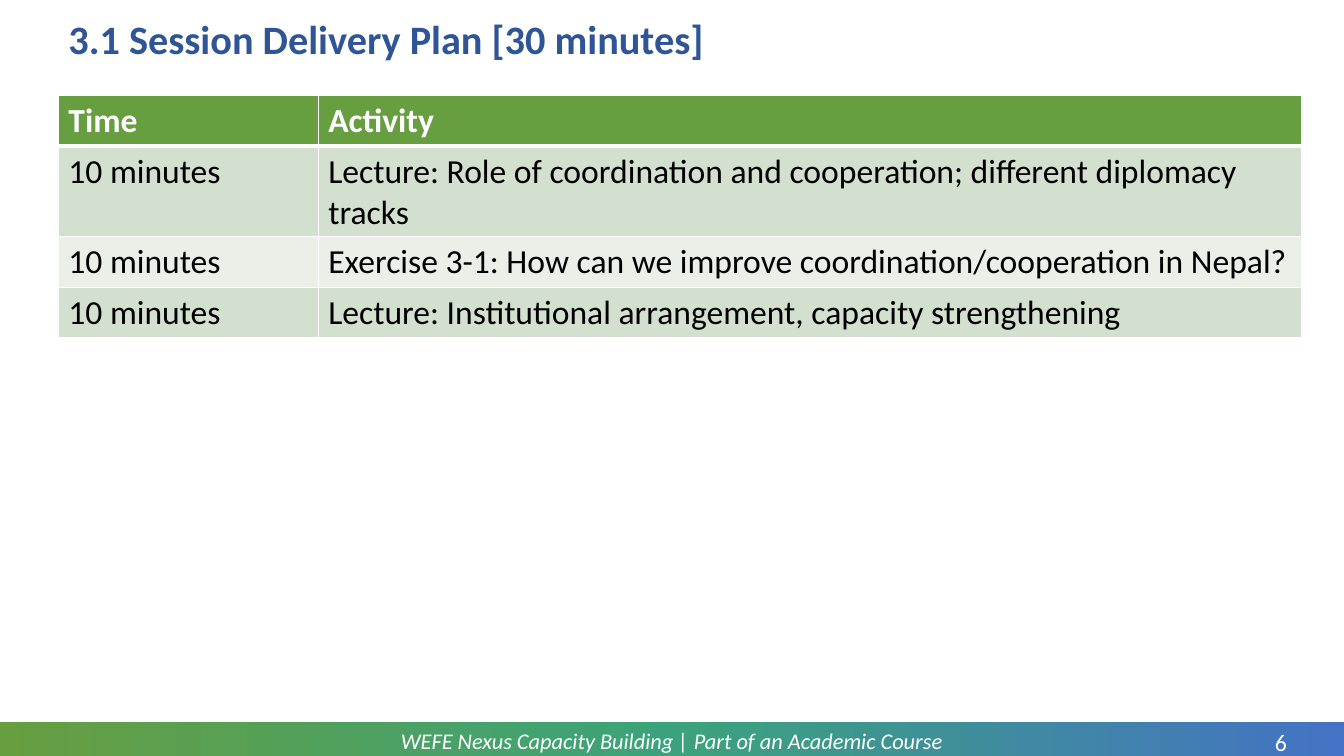
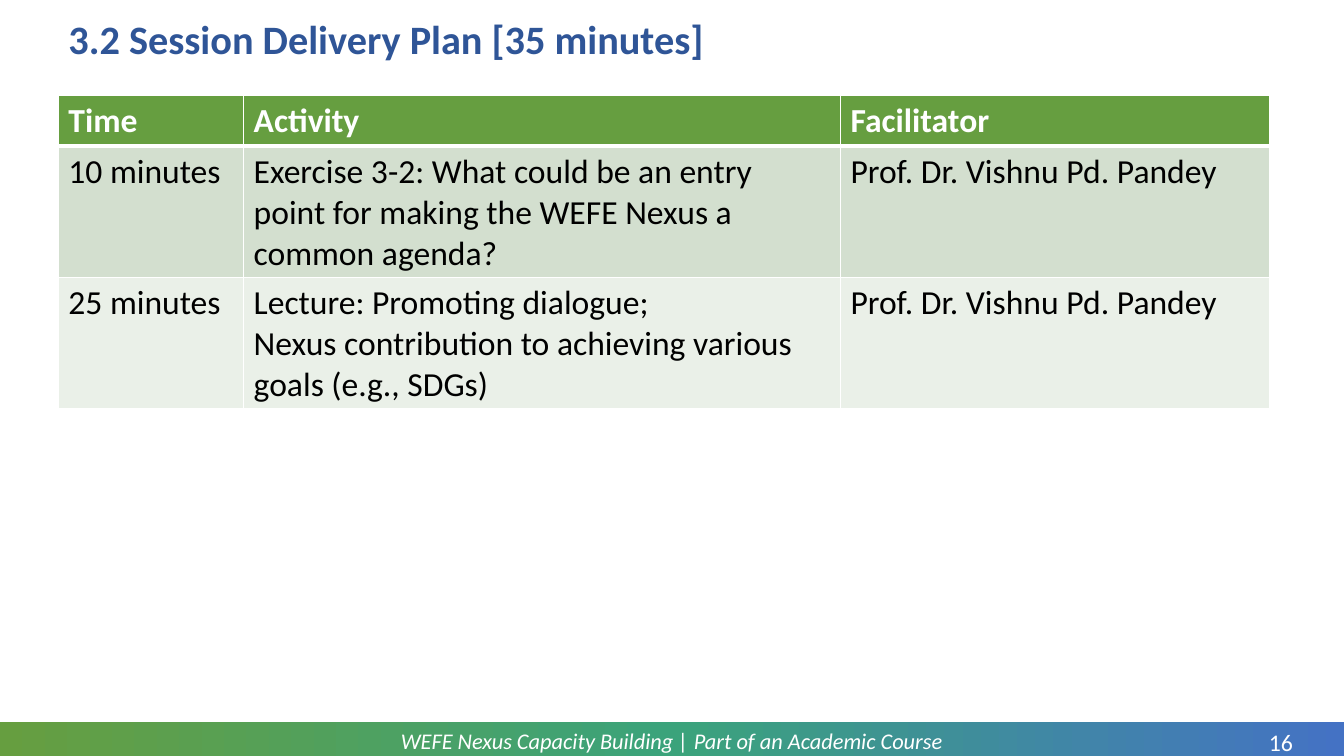
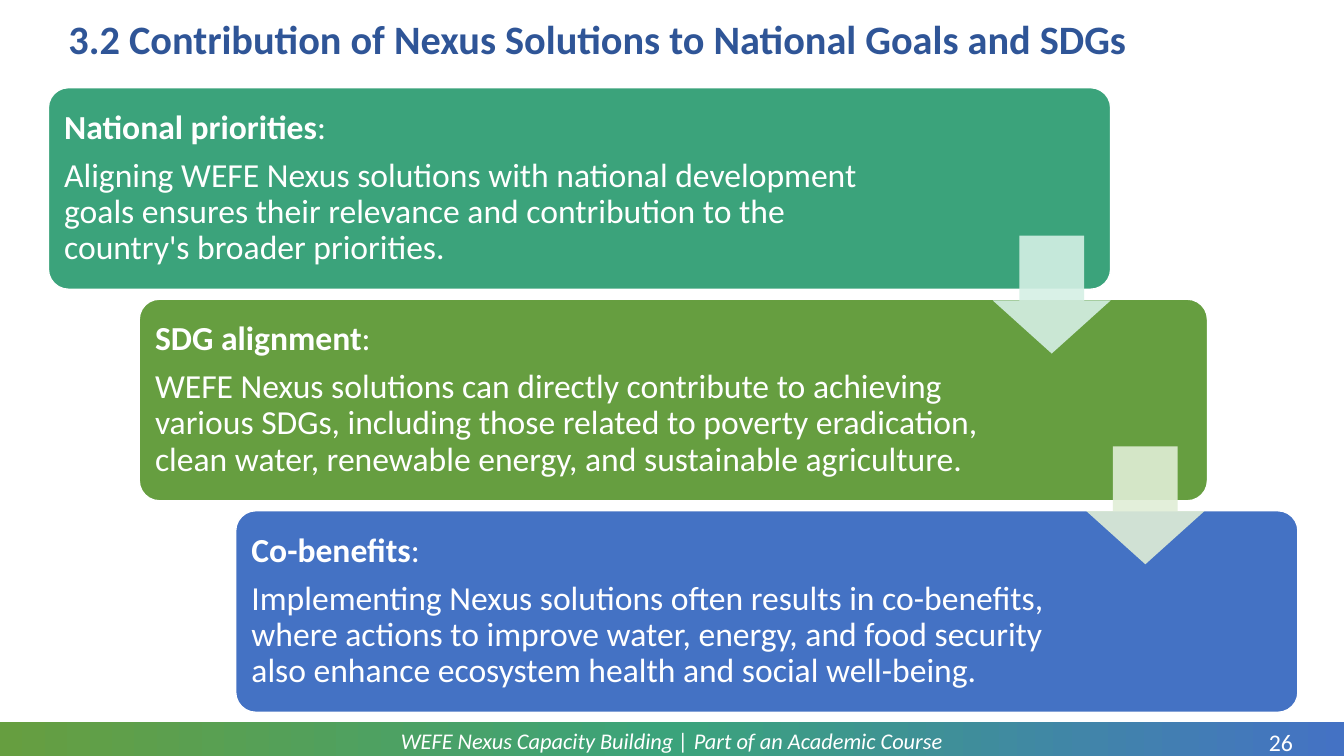
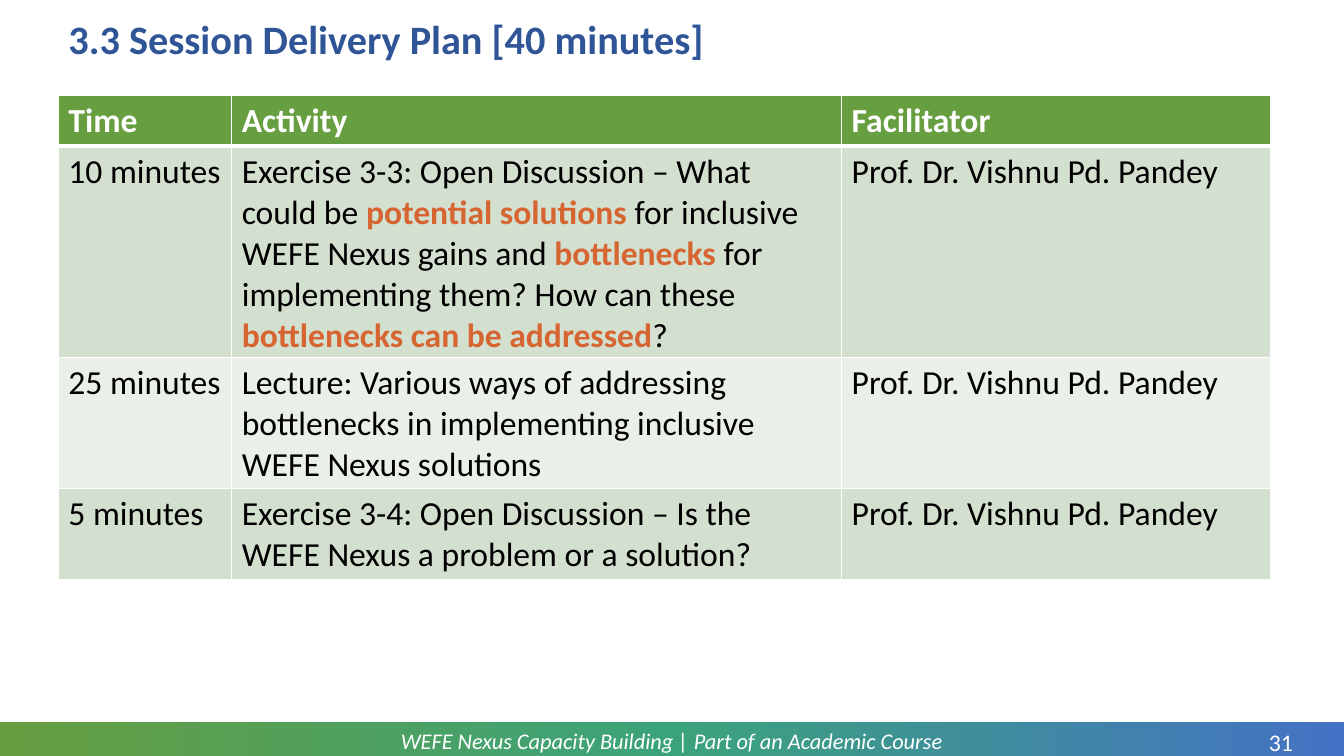
from copy import deepcopy
from dataclasses import dataclass

from lxml import etree
from pptx import Presentation
from pptx.dml.color import RGBColor
from pptx.enum.shapes import MSO_SHAPE
from pptx.enum.text import MSO_ANCHOR, MSO_AUTO_SIZE, PP_ALIGN
from pptx.oxml.ns import qn
from pptx.util import Cm, Pt

LEFT, CENTER = PP_ALIGN.LEFT, PP_ALIGN.CENTER
TOP, MIDDLE = MSO_ANCHOR.TOP, MSO_ANCHOR.MIDDLE
NO_FIT = MSO_AUTO_SIZE.NONE
RECT, CARD, ARROW = MSO_SHAPE.RECTANGLE, MSO_SHAPE.ROUNDED_RECTANGLE, MSO_SHAPE.DOWN_ARROW


@dataclass(frozen=True)
class Theme:
    font: str = "Calibri"
    white: str = "FFFFFF"
    black: str = "000000"
    title: str = "2F5597"
    green: str = "669E40"
    teal: str = "3BA37B"
    blue: str = "4472C4"
    accent: str = "D66532"
    bands: tuple = ("D3DFCF", "EAF0E8")
    arrows: tuple = ("D5F0E5", "E0EED6")
    title_size: float = 28.8
    body_size: float = 24
    footer_size: float = 16
    page_size: float = 17


T = Theme()

FOOTER = "WEFE Nexus Capacity Building | Part of an Academic Course"
SPEAKER = "Prof. Dr. Vishnu Pd. Pandey"

PLAN_1 = [
    ("Time", "Activity"),
    ("10 minutes", "Lecture: Role of coordination and cooperation; different diplomacy tracks"),
    ("10 minutes", "Exercise 3-1: How can we improve coordination/cooperation in Nepal?"),
    ("10 minutes", "Lecture: Institutional arrangement, capacity strengthening"),
]
PLAN_2 = [
    ("Time", "Activity", "Facilitator"),
    ("10 minutes",
     "Exercise 3-2: What could be an entry point for making the WEFE Nexus a common agenda?",
     SPEAKER),
    ("25 minutes",
     "Lecture: Promoting dialogue;\n"
     "Nexus contribution to achieving various goals (e.g., SDGs)",
     SPEAKER),
]
PLAN_3 = [
    ("Time", "Activity", "Facilitator"),
    ("10 minutes",
     "Exercise 3-3: Open Discussion – What could be *potential solutions *for inclusive "
     "WEFE Nexus gains and *bottlenecks* for implementing them? How can these "
     "*bottlenecks can be addressed*?",
     SPEAKER),
    ("25 minutes",
     "Lecture: Various ways of addressing bottlenecks in implementing inclusive "
     "WEFE Nexus solutions",
     SPEAKER),
    ("5 minutes",
     "Exercise 3-4: Open Discussion – Is the WEFE Nexus a problem or a solution?",
     SPEAKER),
]
CARDS = [
    (T.teal, 1.22, 26.77, 21.82,
     "*National priorities*:\nAligning WEFE Nexus solutions with national development goals "
     "ensures their relevance and contribution to the country's broader priorities."),
    (T.green, 3.51, 26.92, 21.26,
     "*SDG alignment*:\nWEFE Nexus solutions can directly contribute to achieving various SDGs, "
     "including those related to poverty eradication, clean water, renewable energy, "
     "and sustainable agriculture."),
    (T.blue, 5.94, 26.77, 21.13,
     "*Co-benefits*:\nImplementing Nexus solutions often results in co-benefits, where actions "
     "to improve water, energy, and food security also enhance ecosystem health "
     "and social well-being."),
]
ARROW_SPOTS = [(25.02, 5.94), (27.38, 11.25)]


def rgb(color):
    return RGBColor.from_string(color)


def write(tf, text, size, color, bold=False, italic=False, emphasis=None,
          align=LEFT, line=None, after=None, anchor=MIDDLE):
    tf.word_wrap = True
    tf.vertical_anchor = anchor
    for i, part in enumerate(text.split("\n")):
        p = tf.add_paragraph() if i else tf.paragraphs[0]
        p.alignment, p.line_spacing = align, line
        if after is not None:
            p.space_after = Pt(after)
        p.font.name, p.font.size = T.font, Pt(size)
        p.font.bold, p.font.italic = bold, italic
        p.font.color.rgb = rgb(color)
        for j, piece in enumerate(part.split("*")):
            if piece:
                r = p.add_run()
                r.text = piece
                if j % 2:
                    r.font.bold = True
                    r.font.color.rgb = rgb(emphasis or color)


def add_filled(slide, kind, box, color):
    sp = slide.shapes.add_shape(kind, *map(Cm, box))
    sp.shadow.inherit = False
    sp.fill.solid()
    sp.fill.fore_color.rgb = rgb(color)
    sp.line.fill.background()
    return sp


def set_up_layout(layout):
    for ph in list(layout.placeholders):
        if ph.placeholder_format.idx:
            ph.element.getparent().remove(ph.element)
    title = layout.placeholders[0]
    title.left, title.top, title.width, title.height = map(Cm, (1.47, 0.33, 30.86, 1.42))


def move_footer_to_layout(slide):
    band = add_filled(slide, RECT, (0, 18.19, 33.87, 0.86), T.green)
    band.fill.gradient()
    band.fill.gradient_angle = 0
    stops = band.element.find(".//" + qn("a:gsLst"))
    stops.append(deepcopy(stops[0]))
    for stop, position, color in zip(band.fill.gradient_stops, (0, 0.5, 1),
                                     (T.green, T.teal, T.blue)):
        stop.position = position
        stop.color.rgb = rgb(color)
    label = slide.shapes.add_textbox(*map(Cm, (2.34, 18.21, 29.18, 0.91)))
    write(label.text_frame, FOOTER, T.footer_size, T.white, italic=True, align=CENTER, after=8)
    for sp in (band, label):
        slide.slide_layout.shapes.element.append(sp.element)


def add_slide(prs, layout, title, page):
    slide = prs.slides.add_slide(layout)
    if len(prs.slides) == 1:
        move_footer_to_layout(slide)
    tf = slide.shapes.title.text_frame
    tf.auto_size = NO_FIT
    write(tf, title, T.title_size, T.title, bold=True, line=0.9)
    number = slide.shapes.add_textbox(*map(Cm, (31.52, 18.34, 1.52, 0.74)))
    tf = number.text_frame
    tf.margin_left = tf.margin_right = tf.margin_top = tf.margin_bottom = 0
    write(tf, str(page), T.page_size, T.white, align=CENTER, anchor=TOP)
    return slide


def set_borders(cell, top, bottom):
    tc_pr = cell._tc.get_or_add_tcPr()
    for side, width in (("L", 1), ("R", 1), ("T", top), ("B", bottom)):
        ln = etree.SubElement(tc_pr, qn("a:ln" + side), w=str(Pt(width)))
        fill = etree.SubElement(ln, qn("a:solidFill"))
        etree.SubElement(fill, qn("a:srgbClr"), val=T.white)


def add_plan(slide, rows, widths):
    row_height = 1.04
    frame = slide.shapes.add_table(len(rows), len(widths), Cm(1.47), Cm(2.41),
                                   Cm(sum(widths)), Cm(row_height * len(rows)))
    table = frame.table
    for column, width in zip(table.columns, widths):
        column.width = Cm(width)
    for i, row in enumerate(rows):
        header = i == 0
        for j, text in enumerate(row):
            cell = table.cell(i, j)
            set_borders(cell, 3 if i == 1 else 1, 3 if header else 1)
            cell.fill.solid()
            cell.fill.fore_color.rgb = rgb(T.green if header else T.bands[(i - 1) % 2])
            write(cell.text_frame, text, T.body_size, T.white if header else T.black,
                  bold=header, emphasis=T.accent, anchor=TOP)


def add_cards(slide):
    top, height, step, corner, pad = 2.21, 5.08, 5.33, 0.15, 0.25
    for i, (color, left, width, text_width, text) in enumerate(CARDS):
        sp = add_filled(slide, CARD, (left, top + i * step, width, height), color)
        sp.adjustments[0] = 0.1
        sp.line.color.rgb = rgb(T.white)
        sp.line.width = Pt(1)
        tf = sp.text_frame
        tf.margin_left = tf.margin_top = tf.margin_bottom = Cm(pad)
        tf.margin_right = Cm(width - 2 * corner - text_width + pad)
        write(tf, text, T.body_size, T.white, line=0.9, after=8.4)
    for (left, y), color in zip(ARROW_SPOTS, T.arrows):
        sp = add_filled(slide, ARROW, (left, y, 2.97, 2.97), color)
        sp.adjustments[0], sp.adjustments[1] = 0.55, 0.45
        tint = sp.element.spPr.find(qn("a:solidFill"))[0]
        etree.SubElement(tint, qn("a:alpha"), val="90000")


SLIDES = [
    ("3.1 Session Delivery Plan [30 minutes]", 6, add_plan, (PLAN_1, (6.55, 24.79))),
    ("3.2 Session Delivery Plan [35 minutes]", 16, add_plan, (PLAN_2, (4.67, 15.04, 10.82))),
    ("3.2 Contribution of Nexus Solutions to National Goals and SDGs", 26, add_cards, ()),
    ("3.3 Session Delivery Plan [40 minutes]", 31, add_plan, (PLAN_3, (4.37, 15.37, 10.82))),
]


def main():
    prs = Presentation()
    prs.slide_width, prs.slide_height = Cm(33.87), Cm(19.05)
    layout = prs.slide_layouts[5]
    set_up_layout(layout)
    for title, page, fill_slide, content in SLIDES:
        fill_slide(add_slide(prs, layout, title, page), *content)
    prs.save("out.pptx")


if __name__ == "__main__":
    main()
